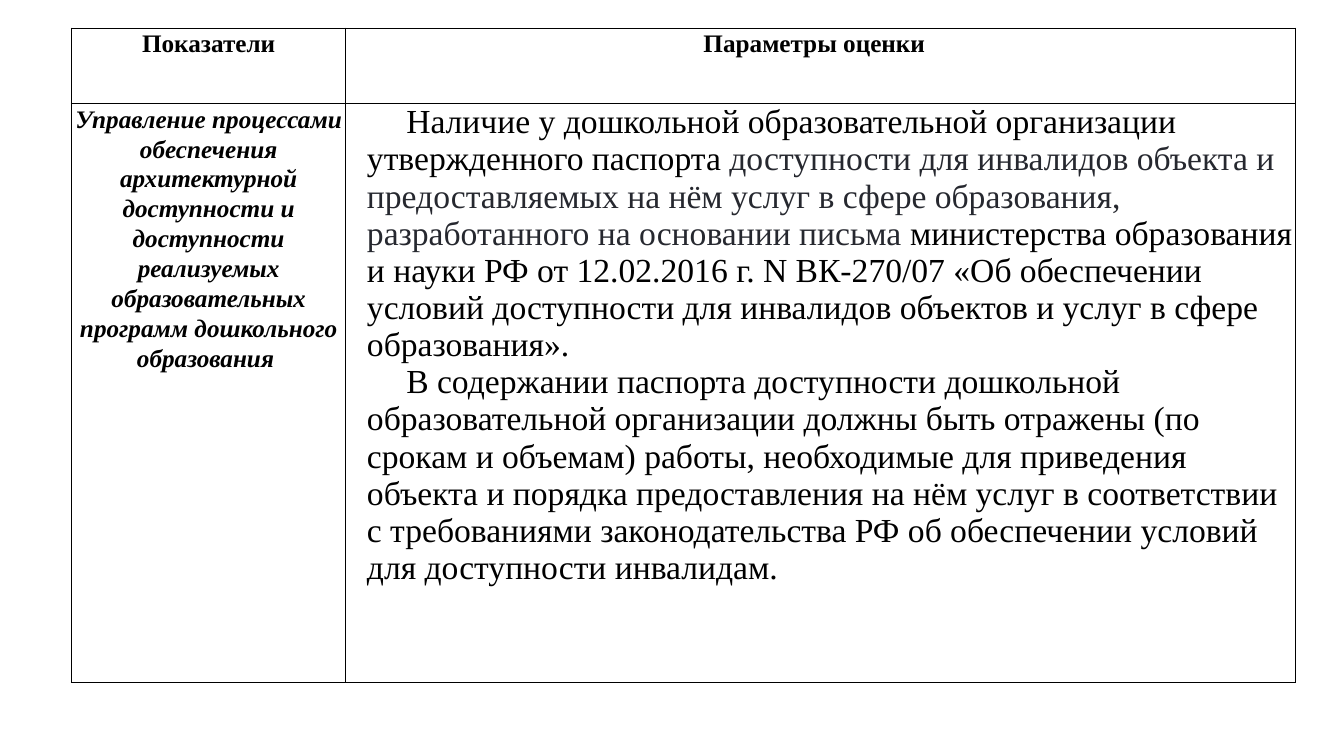
from lxml import etree
from pptx import Presentation
from pptx.dml.color import RGBColor
from pptx.enum.text import PP_ALIGN
from pptx.oxml.ns import qn
from pptx.util import Inches, Pt

CENTER, LEFT = PP_ALIGN.CENTER, PP_ALIGN.LEFT
BLACK, GRAPHITE = "000000", "26282F"
COLUMNS = [2.72, 9.42]
ROWS = [0.75, 5.74]
HEADING = {"size": Pt(18), "bold": True, "italic": False}
INDICATOR = {"size": Pt(18), "bold": True, "italic": True}
BODY = {"size": Pt(24), "bold": False, "italic": False}
CENTERED = {"alignment": CENTER, "line_spacing": 1.07}
INDENTED = {"alignment": LEFT}


def rgb(color):
    return RGBColor.from_string(color)


def add_borders(cell):
    properties = cell._tc.get_or_add_tcPr()
    for side in ("a:lnL", "a:lnR", "a:lnT", "a:lnB"):
        line = etree.SubElement(properties, qn(side), w=str(Pt(1)))
        fill = etree.SubElement(line, qn("a:solidFill"))
        etree.SubElement(fill, qn("a:srgbClr"), val=BLACK)


indicator = (
    "Управление процессами обеспечения архитектурной доступности и доступности "
    "реализуемых образовательных программ дошкольного образования "
)
passport = [
    ("Наличие у дошкольной образовательной организации утвержденного паспорта ", BLACK),
    ("доступности для инвалидов объекта и предоставляемых на нём услуг в сфере "
     "образования, разработанного на основании письма ", GRAPHITE),
    ("министерства образования и науки РФ от 12.02.2016 г. N ВК-270/07 «Об обеспечении "
     "условий доступности для инвалидов объектов и услуг в сфере образования».", BLACK),
]
contents = [
    ("В содержании паспорта доступности дошкольной образовательной организации должны "
     "быть отражены (по срокам и объемам) работы, необходимые для приведения объекта и "
     "порядка предоставления на нём услуг в соответствии с требованиями "
     "законодательства РФ об обеспечении условий для доступности инвалидам.", BLACK),
]
cells = [
    (0, 0, HEADING, CENTERED, [[("Показатели", BLACK)]]),
    (0, 1, HEADING, CENTERED, [[("Параметры оценки  ", BLACK)]]),
    (1, 0, INDICATOR, CENTERED, [[(indicator, BLACK)]]),
    (1, 1, BODY, INDENTED, [passport, contents]),
]

presentation = Presentation()
presentation.slide_width = Inches(13.33)
presentation.slide_height = Inches(7.5)
slide = presentation.slides.add_slide(presentation.slide_layouts[6])

table = slide.shapes.add_table(
    len(ROWS), len(COLUMNS), Inches(0.71), Inches(0.28),
    Inches(sum(COLUMNS)), Inches(sum(ROWS)),
).table
table.horz_banding = False
for column, width in zip(table.columns, COLUMNS):
    column.width = Inches(width)
for row, height in zip(table.rows, ROWS):
    row.height = Inches(height)

for row, column, font_format, paragraph_format, paragraphs in cells:
    cell = table.cell(row, column)
    add_borders(cell)
    cell.fill.background()
    cell.margin_left = cell.margin_right = Inches(0.01)
    cell.margin_top = cell.margin_bottom = 0
    for index, runs in enumerate(paragraphs):
        frame = cell.text_frame
        paragraph = frame.add_paragraph() if index else frame.paragraphs[0]
        for name, value in paragraph_format.items():
            setattr(paragraph, name, value)
        if paragraph_format is INDENTED:
            properties = paragraph._p.get_or_add_pPr()
            properties.set("marL", str(Inches(0.2)))
            properties.set("indent", str(Inches(0.39)))
        for text, color in runs:
            run = paragraph.add_run()
            run.text = text
            run.font.name = "Times New Roman"
            run.font.color.rgb = rgb(color)
            for name, value in font_format.items():
                setattr(run.font, name, value)

presentation.save("out.pptx")
